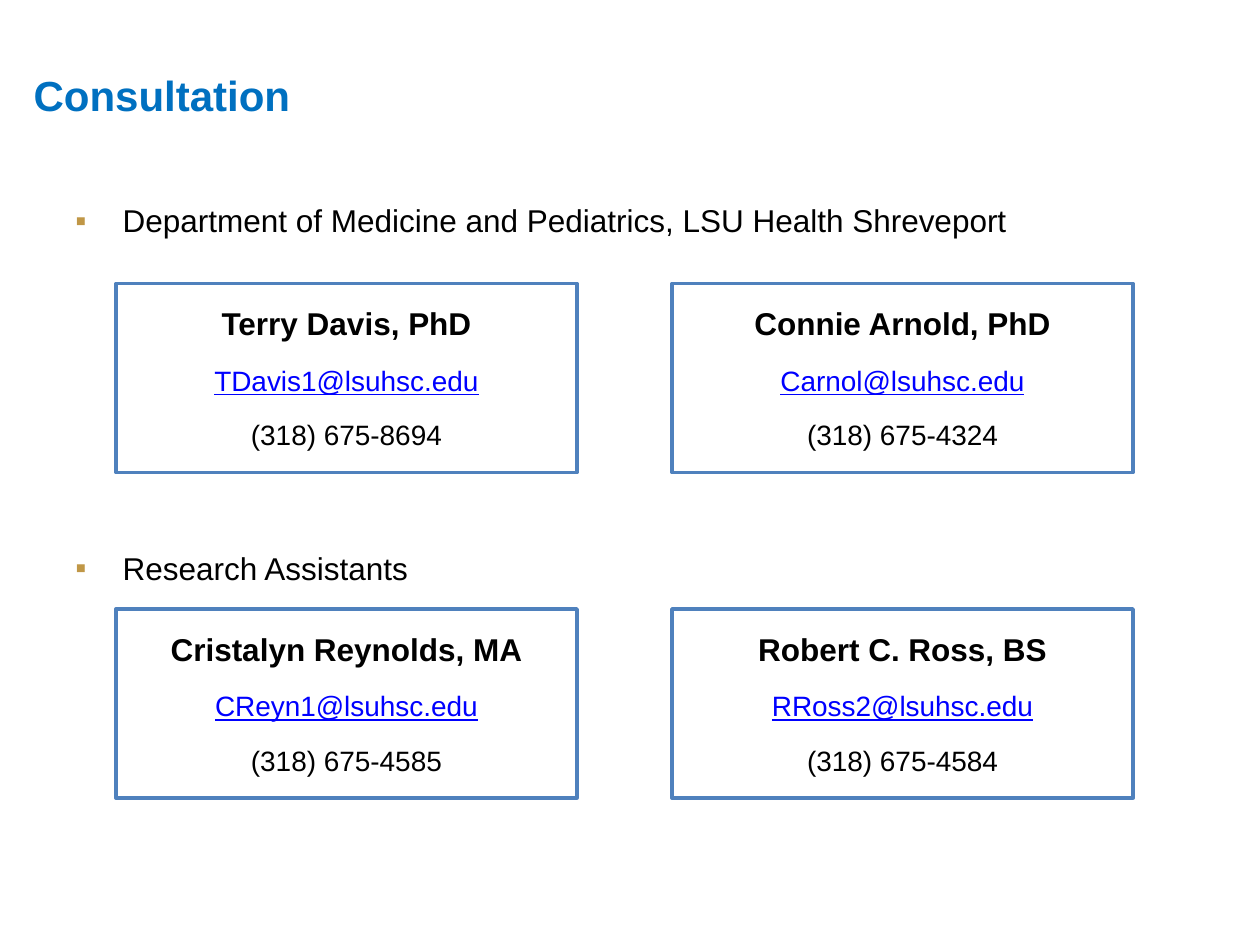
from lxml import etree
from pptx import Presentation
from pptx.dml.color import RGBColor
from pptx.enum.shapes import MSO_SHAPE
from pptx.enum.text import MSO_ANCHOR, PP_ALIGN
from pptx.oxml.ns import qn
from pptx.util import Pt

FONT = "Arial"
BLACK, WHITE, LINK = "000000", "FFFFFF", "0000FF"
TITLE_BLUE, BORDER_BLUE, BULLET_GOLD = "0070C0", "4F81BD", "C09746"

CARD_WIDTH, CARD_HEIGHT = 263.5, 108
CARD_LEFTS = (66.25, 384)

GROUPS = [
    # heading, heading top, card top, people
    ("Department of Medicine and Pediatrics, LSU Health Shreveport", 111.6, 162, [
        ("Terry Davis, PhD", "TDavis1@lsuhsc.edu", "(318) 675-8694"),
        ("Connie Arnold, PhD", "Carnol@lsuhsc.edu", "(318) 675-4324"),
    ]),
    ("Research Assistants", 310, 348, [
        ("Cristalyn Reynolds, MA", "CReyn1@lsuhsc.edu", "(318) 675-4585"),
        ("Robert C. Ross, BS", "RRoss2@lsuhsc.edu", "(318) 675-4584"),
    ]),
]


def color(value):
    return RGBColor.from_string(value)


def format_runs(paragraph, size, hex_color, bold=False, underline=False):
    for run in paragraph.runs:
        run.font.name = FONT
        run.font.size = Pt(size)
        run.font.bold = bold
        run.font.underline = underline
        run.font.color.rgb = color(hex_color)


def add_bullet(paragraph, indent):
    properties = paragraph._p.get_or_add_pPr()
    properties.set("marL", str(Pt(indent)))
    properties.set("indent", str(-Pt(indent)))
    bullet_color = etree.SubElement(properties, qn("a:buClr"))
    etree.SubElement(bullet_color, qn("a:srgbClr"), val=BULLET_GOLD)
    etree.SubElement(properties, qn("a:buFont"), typeface=FONT)
    etree.SubElement(properties, qn("a:buChar"), char="▪")


def place_title(slide, text, left, top, width, height):
    title = slide.shapes.title
    title.left, title.top = Pt(left), Pt(top)
    title.width, title.height = Pt(width), Pt(height)
    frame = title.text_frame
    frame.text = text
    frame.vertical_anchor = MSO_ANCHOR.TOP
    paragraph = frame.paragraphs[0]
    paragraph.alignment = PP_ALIGN.LEFT
    format_runs(paragraph, 24, TITLE_BLUE, bold=True)


def add_heading(slide, text, left, top, width, height):
    box = slide.shapes.add_textbox(Pt(left), Pt(top), Pt(width), Pt(height))
    frame = box.text_frame
    frame.word_wrap = True
    frame.text = text
    paragraph = frame.paragraphs[0]
    add_bullet(paragraph, 27)
    format_runs(paragraph, 18, BLACK)


def add_contact_card(slide, person, left, top, width, height):
    card = slide.shapes.add_shape(
        MSO_SHAPE.RECTANGLE, Pt(left), Pt(top), Pt(width), Pt(height))
    card.shadow.inherit = False
    card.fill.solid()
    card.fill.fore_color.rgb = color(WHITE)
    card.line.color.rgb = color(BORDER_BLUE)
    card.line.width = Pt(2)

    frame = card.text_frame
    frame.word_wrap = True
    frame.vertical_anchor = MSO_ANCHOR.MIDDLE
    frame.text = "\n".join(person)
    for index, paragraph in enumerate(frame.paragraphs):
        paragraph.alignment = PP_ALIGN.CENTER
        paragraph.space_before = Pt(6 if index else 0)
        paragraph.space_after = Pt(6)
    name, email, phone = frame.paragraphs
    format_runs(name, 18, BLACK, bold=True)
    format_runs(email, 16, LINK, underline=True)
    format_runs(phone, 16, BLACK)


def main():
    presentation = Presentation()
    presentation.slide_width, presentation.slide_height = Pt(720), Pt(540)
    slide = presentation.slides.add_slide(presentation.slide_layouts[5])

    # Title
    place_title(slide, "Consultation", 12, 36, 456, 36)

    # Each heading with its row of contact cards
    for heading, heading_top, card_top, people in GROUPS:
        add_heading(slide, heading, 36, heading_top, 660, 28)
        for left, person in zip(CARD_LEFTS, people):
            add_contact_card(slide, person, left, card_top, CARD_WIDTH, CARD_HEIGHT)

    presentation.save("out.pptx")


if __name__ == "__main__":
    main()
